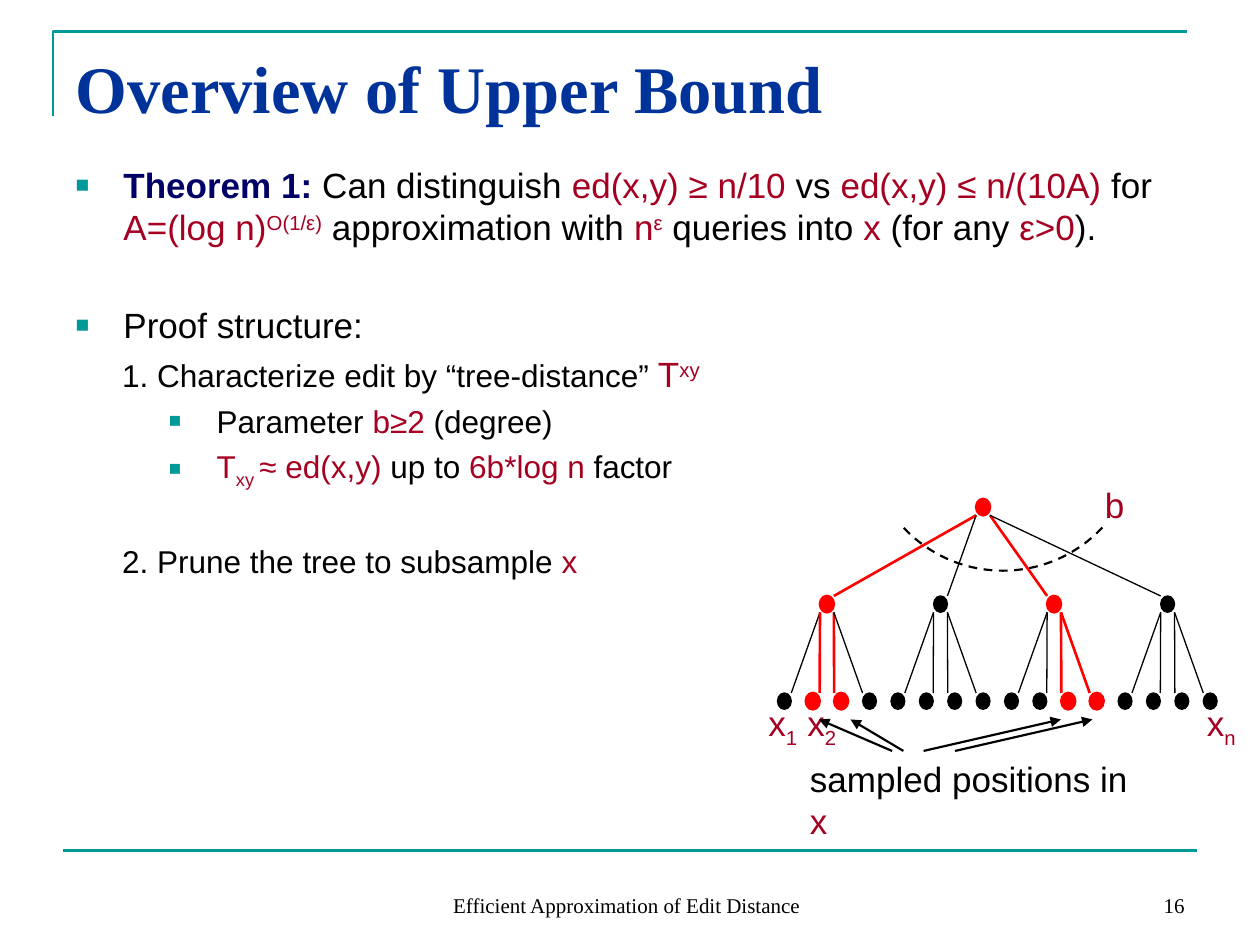
from collections import namedtuple

from lxml.etree import SubElement
from pptx import Presentation
from pptx.dml.color import RGBColor
from pptx.enum.dml import MSO_LINE
from pptx.enum.shapes import MSO_CONNECTOR, MSO_SHAPE
from pptx.enum.text import MSO_ANCHOR, MSO_AUTO_SIZE, PP_ALIGN
from pptx.oxml.ns import qn
from pptx.util import Inches, Pt

TEAL = RGBColor(0x00, 0x99, 0x99)
TITLE_BLUE = RGBColor(0x00, 0x33, 0x99)
NAVY = RGBColor(0x00, 0x00, 0x66)
CRIMSON = RGBColor(0xA5, 0x00, 0x21)
RED = RGBColor(0xFF, 0x00, 0x00)
BLACK = RGBColor(0x00, 0x00, 0x00)
SANS, SERIF = "Arial", "Times New Roman"

Box = namedtuple("Box", "left top width height")
Style = namedtuple("Style", "color baseline bold")
PLAIN = Style(BLACK, 0, False)
LEAD = Style(NAVY, 0, True)
MATH = Style(CRIMSON, 0, False)
SUPER = Style(CRIMSON, 30000, False)
SUB = Style(CRIMSON, -25000, False)

# Outline levels: left margin, hanging indent, bulleted
LEVELS = [(0.38, -0.38, True), (0.73, -0.36, False), (1.12, -0.38, True)]

# Each paragraph: level, space before, size, runs (text, style[, size])
OUTLINE = [
    (0, 4, 20, [("Theorem 1:", LEAD), (" Can distinguish ", PLAIN),
                ("ed(x,y) ≥ n/10 ", MATH), ("vs ", PLAIN),
                ("ed(x,y) ≤ n/(10A)", MATH), (" for ", PLAIN),
                ("A=(log n)", MATH), ("O(1/ε)", SUPER),
                (" approximation with ", PLAIN), ("n", MATH), ("ε", SUPER),
                (" queries into ", PLAIN), ("x", MATH),
                (" (for any ", PLAIN), ("ε>0", MATH), (").", PLAIN)]),
    (0, 32, 20, [("Proof structure:", PLAIN)]),
    (1, 4, 18, [("1. Characterize edit by “tree-distance” ", PLAIN),
                ("T", MATH, 20), ("xy", SUPER, 20)]),
    (2, 4, 18, [("Parameter ", PLAIN), ("b≥2 ", MATH), ("(degree)", PLAIN)]),
    (2, 4, 18, [("T", MATH), ("xy ", SUB), ("≈ ed(x,y)", MATH),
                (" up to ", PLAIN), ("6b*log n", MATH), (" factor", PLAIN)]),
    (1, 30, 18, [("2. Prune the tree to subsample ", PLAIN), ("x", MATH)]),
]

DEGREE = 4
SAMPLED_LEAVES = {1, 2, 10, 11}
NODE_W, NODE_H = 0.11, 0.13


def add_line(slide, start, end, color, width, arrow=False):
    line = slide.shapes.add_connector(
        MSO_CONNECTOR.STRAIGHT, *[Inches(v) for v in (*start, *end)])
    line.line.color.rgb = color
    line.line.width = Pt(width)
    if arrow:
        SubElement(line.line._get_or_add_ln(), qn("a:tailEnd"), type="triangle")
    SubElement(line._element.spPr, qn("a:effectLst"))


def add_runs(paragraph, runs, size, font=SANS):
    for text, style, *own_size in runs:
        run = paragraph.add_run()
        run.text = text
        run.font.name = font
        run.font.size = Pt(own_size[0] if own_size else size)
        run.font.bold = style.bold
        run.font.color.rgb = style.color
        if style.baseline:
            run._r.get_or_add_rPr().set("baseline", str(style.baseline))


def add_label(slide, box, runs, size=20, font=SANS, align=PP_ALIGN.LEFT,
              anchor=MSO_ANCHOR.TOP, wrap=False):
    frame = slide.shapes.add_textbox(*map(Inches, box)).text_frame
    frame.word_wrap = wrap
    frame.vertical_anchor = anchor
    frame.paragraphs[0].alignment = align
    add_runs(frame.paragraphs[0], runs, size, font)


def place(placeholder, box):
    placeholder.left, placeholder.top, placeholder.width, placeholder.height = (
        map(Inches, box))
    placeholder.text_frame.auto_size = MSO_AUTO_SIZE.NONE
    return placeholder.text_frame


def set_bullet(paragraph, level):
    margin, indent, bulleted = LEVELS[level]
    props = paragraph._p.get_or_add_pPr()
    props.set("marL", str(Inches(margin)))
    props.set("indent", str(Inches(indent)))
    if not bulleted:
        SubElement(props, qn("a:buNone"))
        return
    SubElement(SubElement(props, qn("a:buClr")), qn("a:srgbClr"), val=str(TEAL))
    SubElement(props, qn("a:buSzPct"), val="65000")
    SubElement(props, qn("a:buFont"), typeface=SANS)
    SubElement(props, qn("a:buChar"), char="■")


def draw_frame(slide, box):
    """Corner rule at the top left and a rule above the footer."""
    left, top = box.left - 0.08, box.top
    right = left + box.width
    pen = slide.shapes.build_freeform(Inches(left), Inches(top + 0.67))
    pen.add_line_segments([(Inches(left), Inches(top)),
                           (Inches(right), Inches(top))], close=False)
    corner = pen.convert_to_shape()
    corner.shadow.inherit = False
    corner.fill.background()
    corner.line.color.rgb = TEAL
    corner.line.width = Pt(1.5)
    bottom = box.top + box.height
    add_line(slide, (box.left, bottom), (box.left + box.width, bottom), TEAL, 1.5)


def draw_title(slide, box):
    frame = place(slide.shapes.title, box)
    frame.vertical_anchor = MSO_ANCHOR.MIDDLE
    frame.paragraphs[0].alignment = PP_ALIGN.LEFT
    add_runs(frame.paragraphs[0],
             [("Overview of Upper Bound", Style(TITLE_BLUE, 0, True))], 38, SERIF)


def draw_outline(slide, box):
    frame = place(slide.placeholders[1], box)
    for index, (level, space, size, runs) in enumerate(OUTLINE):
        paragraph = frame.add_paragraph() if index else frame.paragraphs[0]
        paragraph.level = level
        paragraph.space_before = Pt(space)
        set_bullet(paragraph, level)
        add_runs(paragraph, runs, size)


def draw_tree(slide, box):
    """Tree of three rows; paths to the sampled leaves are red."""
    column = (box.width - NODE_W) / (DEGREE ** 2 - 1)
    row = (box.height - NODE_H) / 2

    def pen(sampled):
        return (RED, 1.5) if sampled else (BLACK, 0.75)

    def draw_node(position, level, sampled):
        x, y = box.left + position * column, box.top + level * row
        color, width = pen(sampled)
        node = slide.shapes.add_shape(
            MSO_SHAPE.OVAL, *map(Inches, (x, y, NODE_W, NODE_H)))
        node.shadow.inherit = False
        node.fill.solid()
        node.fill.fore_color.rgb = color
        node.line.color.rgb = color
        node.line.width = Pt(width)
        return x, y

    def draw_edge(parent, child, rank, sampled):
        # Left children hang from the left corner, right ones from the right
        on_right = rank >= DEGREE / 2
        start = (parent[0] + NODE_W * on_right, parent[1] + NODE_H)
        end = (child[0] + NODE_W * (not on_right), child[1])
        add_line(slide, start, end, *pen(sampled))

    root = draw_node(7, 0, True)
    for branch in range(DEGREE):
        leaves = range(branch * DEGREE, (branch + 1) * DEGREE)
        kept = not SAMPLED_LEAVES.isdisjoint(leaves)
        inner = draw_node(leaves[0] + 1.5, 1, kept)
        draw_edge(root, inner, branch, kept)
        for rank, leaf in enumerate(leaves):
            chosen = leaf in SAMPLED_LEAVES
            draw_edge(inner, draw_node(leaf, 2, chosen), rank, chosen)


def draw_tree_notes(slide, box):
    """Degree arc, leaf names and arrows to the sampled positions."""
    radius = 1.08
    arc = slide.shapes.add_shape(MSO_SHAPE.ARC, *map(Inches, (
        box.left + 0.71, box.top - 1.59, 2 * radius, 2 * radius)))
    arc.adjustments[0], arc.adjustments[1] = 43 * 0.6, 137 * 0.6
    arc.shadow.inherit = False
    arc.fill.background()
    arc.line.color.rgb = BLACK
    arc.line.width = Pt(1.25)
    arc.line.dash_style = MSO_LINE.DASH
    add_label(slide, Box(box.left + 2.5, box.top - 0.17, 0.36, 0.43), [("b", MATH)])

    base = box.top + box.height
    for offset, index in ((-0.17, "1"), (0.14, "2"), (3.31, "n")):
        add_label(slide, Box(box.left + offset, base - 0.11, 0.44, 0.43),
                  [("x", MATH), (index, SUB)])
    for start, end in ((0.91, 0.33), (1, 0.58), (1.16, 2.25), (1.41, 2.5)):
        add_line(slide, (box.left + start, base + 0.33),
                 (box.left + end, base + 0.08), BLACK, 1.25, arrow=True)
    add_label(slide, Box(box.left + 0.16, base + 0.33, 2.85, 0.77),
              [("sampled positions in ", PLAIN), ("x", MATH)], wrap=True)


def draw_footer(slide, box):
    for text, left, width, align in (
            ("Efficient Approximation of Edit Distance", 2.11, 4.73, PP_ALIGN.CENTER),
            ("16", 6.67, 2.33, PP_ALIGN.RIGHT)):
        add_label(slide, Box(box.left + left, box.top, width, box.height),
                  [(text, PLAIN)], 12, SERIF, align, MSO_ANCHOR.BOTTOM, True)


def main():
    deck = Presentation()
    deck.slide_width, deck.slide_height = Inches(10), Inches(7.5)
    slide = deck.slides.add_slide(deck.slide_layouts[1])
    tree_box = Box(6.17, 3.96, 3.49, 1.67)
    draw_frame(slide, Box(0.5, 0.25, 9, 6.5))
    draw_title(slide, Box(0.5, 0.3, 9, 0.78))
    draw_outline(slide, Box(0.5, 1.25, 9, 5.45))
    draw_tree(slide, tree_box)
    draw_tree_notes(slide, tree_box)
    draw_footer(slide, Box(0.5, 6.83, 9, 0.5))
    deck.save("out.pptx")


if __name__ == "__main__":
    main()
